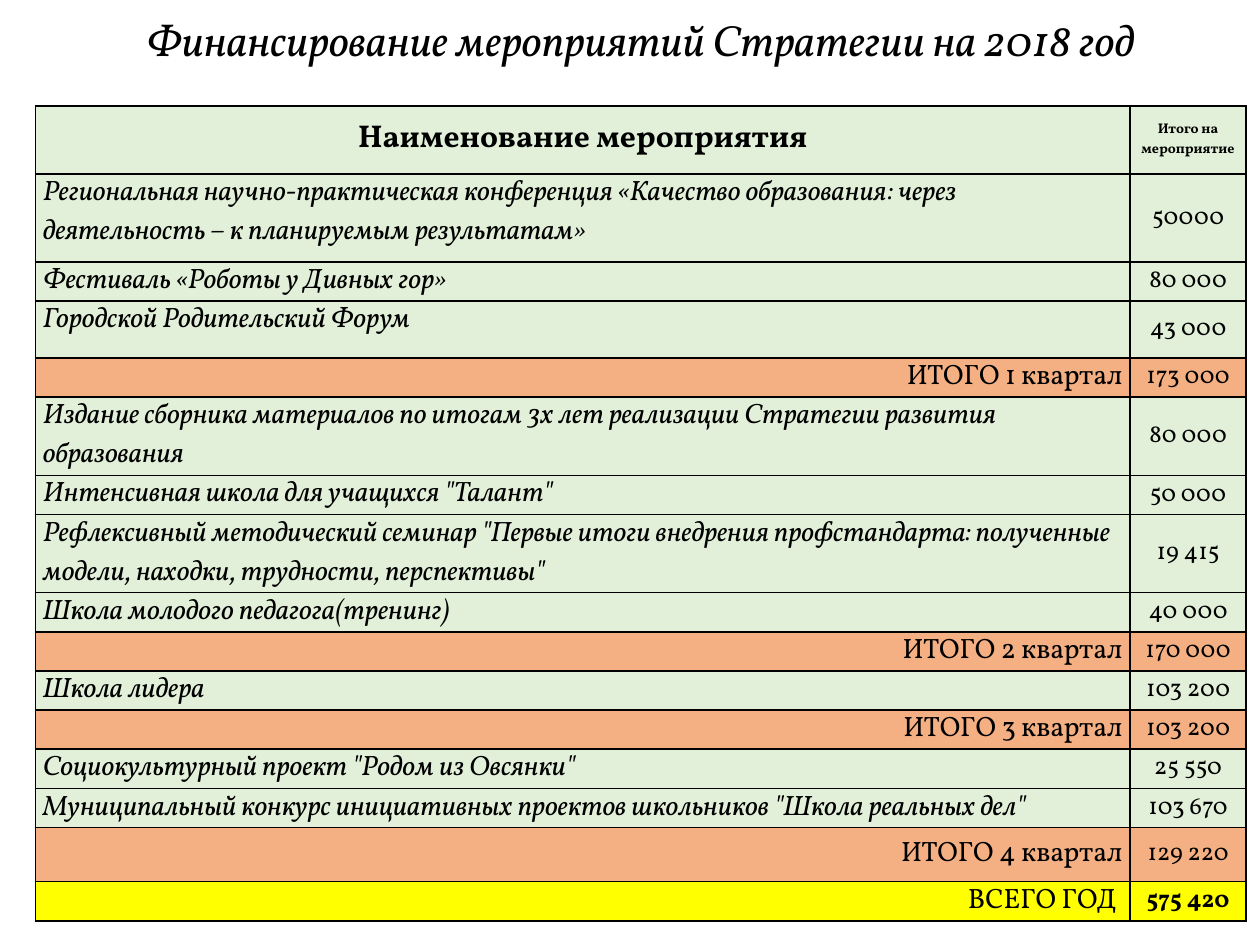
from dataclasses import dataclass

from lxml import etree
from pptx import Presentation
from pptx.dml.color import RGBColor
from pptx.enum.text import MSO_ANCHOR, MSO_AUTO_SIZE, PP_ALIGN
from pptx.oxml.ns import qn
from pptx.util import Inches, Pt

LEFT, CENTER, RIGHT = PP_ALIGN.LEFT, PP_ALIGN.CENTER, PP_ALIGN.RIGHT
TOP, MIDDLE = MSO_ANCHOR.TOP, MSO_ANCHOR.MIDDLE
TITLE_ONLY = 5


@dataclass(frozen=True)
class Theme:
    font: str = "Vollkorn"
    text: str = "000000"
    event: str = "E2F0D9"
    quarter: str = "F4B083"
    year: str = "FFFF00"
    border: str = "000000"
    border_width: int = Pt(1)
    title_size: int = 25
    head_size: int = 18
    small_head_size: int = 8
    name_size: int = 16
    amount_size: int = 14


@dataclass(frozen=True)
class Style:
    size: int
    fill: str
    align: PP_ALIGN = CENTER
    anchor: MSO_ANCHOR = MIDDLE
    bold: bool = False
    italic: bool = False


@dataclass(frozen=True)
class Row:
    name: str
    amount: str
    height: float
    name_style: Style
    amount_style: Style


THEME = Theme()


def event(name: str, amount: str, height: float = 0.29) -> Row:
    return Row(name, amount, height,
               Style(THEME.name_size, THEME.event, LEFT, TOP, italic=True),
               Style(THEME.amount_size, THEME.event))


def quarter(number: int, amount: str, height: float = 0.29, anchor: MSO_ANCHOR = TOP) -> Row:
    return Row(f"ИТОГО {number} квартал", amount, height,
               Style(THEME.name_size, THEME.quarter, RIGHT, anchor),
               Style(THEME.amount_size, THEME.quarter))


ROWS = [
    Row("Наименование мероприятия", "Итого на мероприятие", 0.54,
        Style(THEME.head_size, THEME.event, bold=True),
        Style(THEME.small_head_size, THEME.event, bold=True)),
    event("Региональная научно-практическая конференция «Качество образования: через "
          "деятельность – к планируемым результатам»", "50000", 0.7),
    event("Фестиваль «Роботы у Дивных гор»", "80 000"),
    event("Городской Родительский Форум", "43 000", 0.45),
    quarter(1, "173 000"),
    event("Издание сборника материалов по итогам 3х лет реализации Стратегии развития "
          "образования", "80 000", 0.58),
    event('Интенсивная школа для учащихся "Талант"', "50 000"),
    event('Рефлексивный методический семинар "Первые итоги внедрения профстандарта: '
          'полученные модели, находки, трудности, перспективы"', "19 415", 0.58),
    event("Школа молодого педагога(тренинг)", "40 000"),
    quarter(2, "170 000"),
    event("Школа лидера", "103 200"),
    quarter(3, "103 200"),
    event('Социокультурный проект "Родом из Овсянки"', "25 550"),
    event('Муниципальный конкурс инициативных проектов школьников "Школа реальных дел"',
          "103 670"),
    quarter(4, "129 220", 0.43, MIDDLE),
    Row("ВСЕГО ГОД ", "575 420", 0.31,
        Style(THEME.name_size, THEME.year, RIGHT),
        Style(THEME.amount_size, THEME.year, bold=True)),
]
COLUMNS = (8.69, 0.92)


def write(tf, text: str, size: int, align: PP_ALIGN, bold: bool, italic: bool) -> None:
    p = tf.paragraphs[0]
    p.alignment = align
    r = p.add_run()
    r.text = text
    font = {"name": THEME.font, "size": Pt(size), "bold": bold, "italic": italic}
    for key, value in font.items():
        setattr(r.font, key, value)
    r.font.color.rgb = RGBColor.from_string(THEME.text)


def add_borders(cell) -> None:
    # Border lines come before the fill in the cell properties
    tc_pr = cell._tc.get_or_add_tcPr()
    for i, side in enumerate(("lnL", "lnR", "lnT", "lnB")):
        ln = etree.Element(qn(f"a:{side}"), w=str(THEME.border_width))
        fill = etree.SubElement(ln, qn("a:solidFill"))
        etree.SubElement(fill, qn("a:srgbClr"), val=THEME.border)
        tc_pr.insert(i, ln)


def fill_cell(cell, text: str, style: Style) -> None:
    layout = {"margin_left": Inches(0.06), "margin_right": Inches(0.06),
              "margin_top": 0, "margin_bottom": 0, "vertical_anchor": style.anchor}
    for key, value in layout.items():
        setattr(cell, key, value)
    cell.fill.solid()
    cell.fill.fore_color.rgb = RGBColor.from_string(style.fill)
    add_borders(cell)
    write(cell.text_frame, text, style.size, style.align, style.bold, style.italic)


def add_title(s, text: str) -> None:
    sp = s.shapes.title
    box = {"left": 0.63, "top": 0.13, "width": 8.9, "height": 0.47}
    for key, value in box.items():
        setattr(sp, key, Inches(value))
    tf = sp.text_frame
    frame = {"auto_size": MSO_AUTO_SIZE.NONE, "word_wrap": True, "vertical_anchor": TOP}
    for key, value in frame.items():
        setattr(tf, key, value)
    write(tf, text, THEME.title_size, CENTER, False, True)
    tf.paragraphs[0].line_spacing = 0.8


def add_budget_table(s, rows: list[Row]) -> None:
    height = sum(row.height for row in rows)
    table = s.shapes.add_table(len(rows), len(COLUMNS), Inches(0.28), Inches(0.84),
                               Inches(sum(COLUMNS)), Inches(height)).table
    table.horz_banding = False
    for column, width in zip(table.columns, COLUMNS):
        column.width = Inches(width)
    for i, row in enumerate(rows):
        table.rows[i].height = Inches(row.height)
        fill_cell(table.cell(i, 0), row.name, row.name_style)
        fill_cell(table.cell(i, 1), row.amount, row.amount_style)


def main() -> None:
    prs = Presentation()
    prs.slide_width, prs.slide_height = Inches(10), Inches(7.5)
    s = prs.slides.add_slide(prs.slide_layouts[TITLE_ONLY])
    add_title(s, "Финансирование мероприятий Стратегии на 2018 год")
    add_budget_table(s, ROWS)
    prs.save("out.pptx")


if __name__ == "__main__":
    main()
